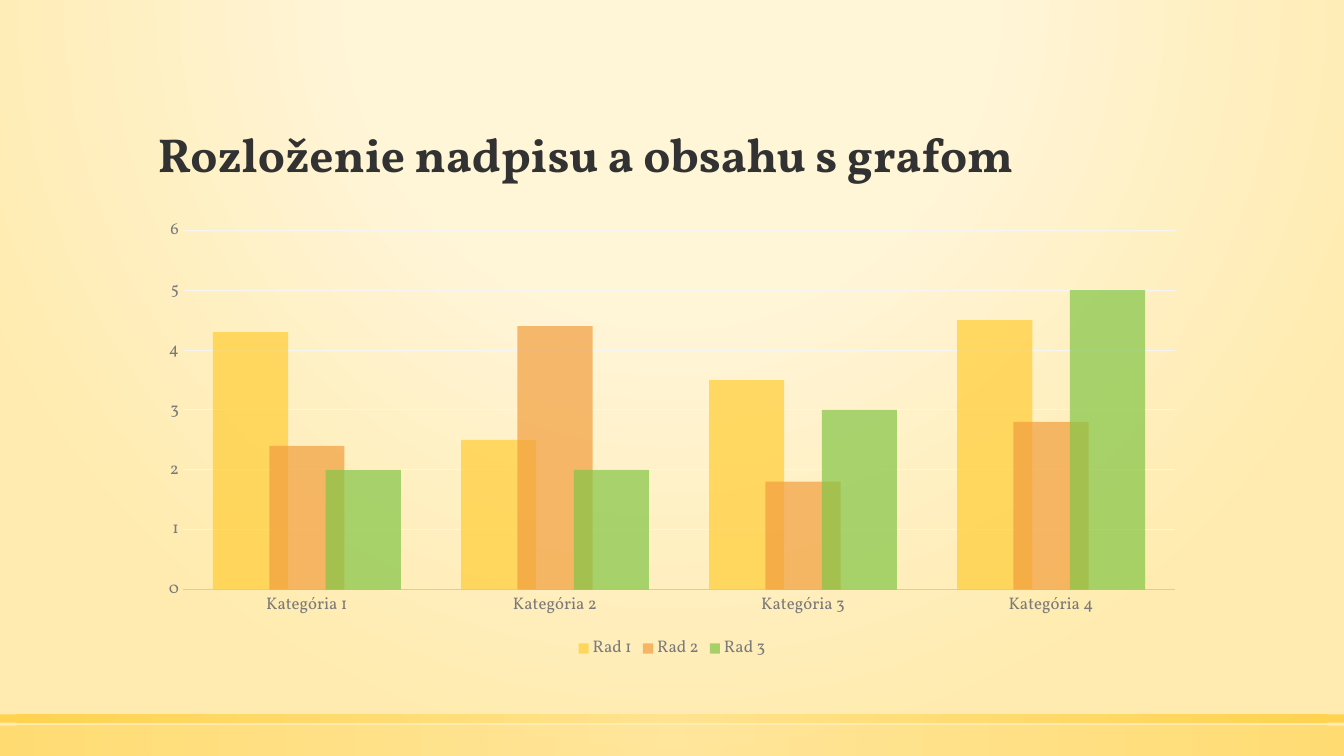
from lxml import etree
from pptx import Presentation
from pptx import util as u
from pptx.chart.data import CategoryChartData
from pptx.dml.color import RGBColor
from pptx.enum import chart as charts, shapes, text
from pptx.oxml.ns import qn

FONT = "Vollkorn"
INK, MUTED, AXIS, GRID = "323232", "7A7A7A", "CCCCCC", "F5F5F5"
CREAM, SAND, LEMON, GOLD = "FFF5D7", "FFEBAF", "FFE186", "FFCD36"
ORANGE, GREEN = "F29E3E", "83C546"
LEFT, WIDTH = 11, 78


def rgb(value):
    return RGBColor.from_string(value)


def add_alpha(color, percent):
    etree.SubElement(color, qn("a:alpha"), val=str(percent * 1000))


def radial(gradient, stops, center):
    for child in list(gradient):
        gradient.remove(child)
    stop_list = etree.SubElement(gradient, qn("a:gsLst"))
    for position, value, alpha in stops:
        stop = etree.SubElement(stop_list, qn("a:gs"), pos=str(position * 1000))
        add_alpha(etree.SubElement(stop, qn("a:srgbClr"), val=value), alpha)
    circle = etree.SubElement(gradient, qn("a:path"), path="circle")
    edges = {side: str(share * 1000) for side, share in zip("ltrb", center)}
    etree.SubElement(circle, qn("a:fillToRect"), **edges)


class Slide:
    def __init__(self, deck):
        self.deck = deck
        self.slide = deck.slides.add_slide(deck.slide_layouts[5])

    def box(self, left, top, width, height):
        across, down = self.deck.slide_width / 100, self.deck.slide_height / 100
        return [round(share * unit) for share, unit in
                ((left, across), (top, down), (width, across), (height, down))]

    def style(self, font, size, color, bold=False):
        font.name, font.size, font.bold = FONT, u.Pt(size), bold
        font.color.rgb = rgb(color)

    def background(self, stops, center):
        self.slide.background.fill.gradient()
        radial(self.slide.element.xpath("./p:cSld/p:bg//a:gradFill")[0], stops, center)

    def band(self, top, height, alpha):
        band = self.slide.shapes.add_shape(
            shapes.MSO_SHAPE.RECTANGLE, *self.box(0, top, 100, height))
        band.shadow.inherit = False
        band.line.fill.background()
        band.fill.gradient()
        radial(band.element.xpath("./p:spPr/a:gradFill")[0],
               [(0, LEMON, alpha), (100, GOLD, alpha)], (50, 50, 50, 50))

    def title(self, words, *place):
        heading = self.slide.shapes.title
        heading.left, heading.top, heading.width, heading.height = self.box(*place)
        frame = heading.text_frame
        frame.text = words
        frame.word_wrap = True
        frame.auto_size = text.MSO_AUTO_SIZE.NONE
        frame.vertical_anchor = text.MSO_ANCHOR.BOTTOM
        line = frame.paragraphs[0]
        line.alignment = text.PP_ALIGN.LEFT
        line.line_spacing = 0.9
        self.style(line.runs[0].font, 34, INK, True)

    def columns(self, categories, rows, *place):
        data = CategoryChartData()
        data.categories = categories
        for name, values, _ in rows:
            data.add_series(name, values)
        chart = self.slide.shapes.add_chart(
            charts.XL_CHART_TYPE.COLUMN_CLUSTERED, *self.box(*place), data).chart
        self.style(chart.font, 10, INK)
        chart.has_title = False
        chart.has_legend = True
        chart.legend.position = charts.XL_LEGEND_POSITION.BOTTOM
        chart.legend.include_in_layout = False
        self.style(chart.legend.font, 12, MUTED)

        plot = chart.plots[0]
        plot.gap_width, plot.overlap = 80, 25
        plot.vary_by_categories = False
        for series, (_, _, color) in zip(plot.series, rows):
            series.invert_if_negative = False
            series.format.fill.solid()
            series.format.fill.fore_color.rgb = rgb(color)
        for fill in chart.element.xpath(".//c:ser/c:spPr/a:solidFill/a:srgbClr"):
            add_alpha(fill, 70)

        for axis in (chart.category_axis, chart.value_axis):
            axis.major_tick_mark = axis.minor_tick_mark = charts.XL_TICK_MARK.NONE
            self.style(axis.tick_labels.font, 12, MUTED)
        baseline = chart.category_axis.format.line
        baseline.color.rgb, baseline.width = rgb(AXIS), u.Pt(1.25)
        scale = chart.value_axis
        scale.minimum_scale, scale.maximum_scale, scale.major_unit = 0, 6, 1
        scale.format.line.fill.background()
        scale.has_major_gridlines = True
        rule = scale.major_gridlines.format.line
        rule.color.rgb, rule.width = rgb(GRID), u.Pt(0.75)


def main():
    deck = Presentation()
    deck.slide_width, deck.slide_height = u.Inches(13.33), u.Inches(7.5)
    page = Slide(deck)
    page.background([(0, CREAM, 59), (40, CREAM, 66), (100, SAND, 100)],
                    (50, -80, 50, 180))
    page.band(96, 4, 50)
    page.band(94.5, 1.1, 80)
    page.title("Rozloženie nadpisu a obsahu s grafom", LEFT, 6.8, WIDTH, 18)
    page.columns([f"Kategória {number}" for number in range(1, 5)],
                 [("Rad 1", (4.3, 2.5, 3.5, 4.5), GOLD),
                  ("Rad 2", (2.4, 4.4, 1.8, 2.8), ORANGE),
                  ("Rad 3", (2, 2, 3, 5), GREEN)],
                 LEFT, 27.75, WIDTH, 60.1)
    deck.save("out.pptx")


if __name__ == "__main__":
    main()
